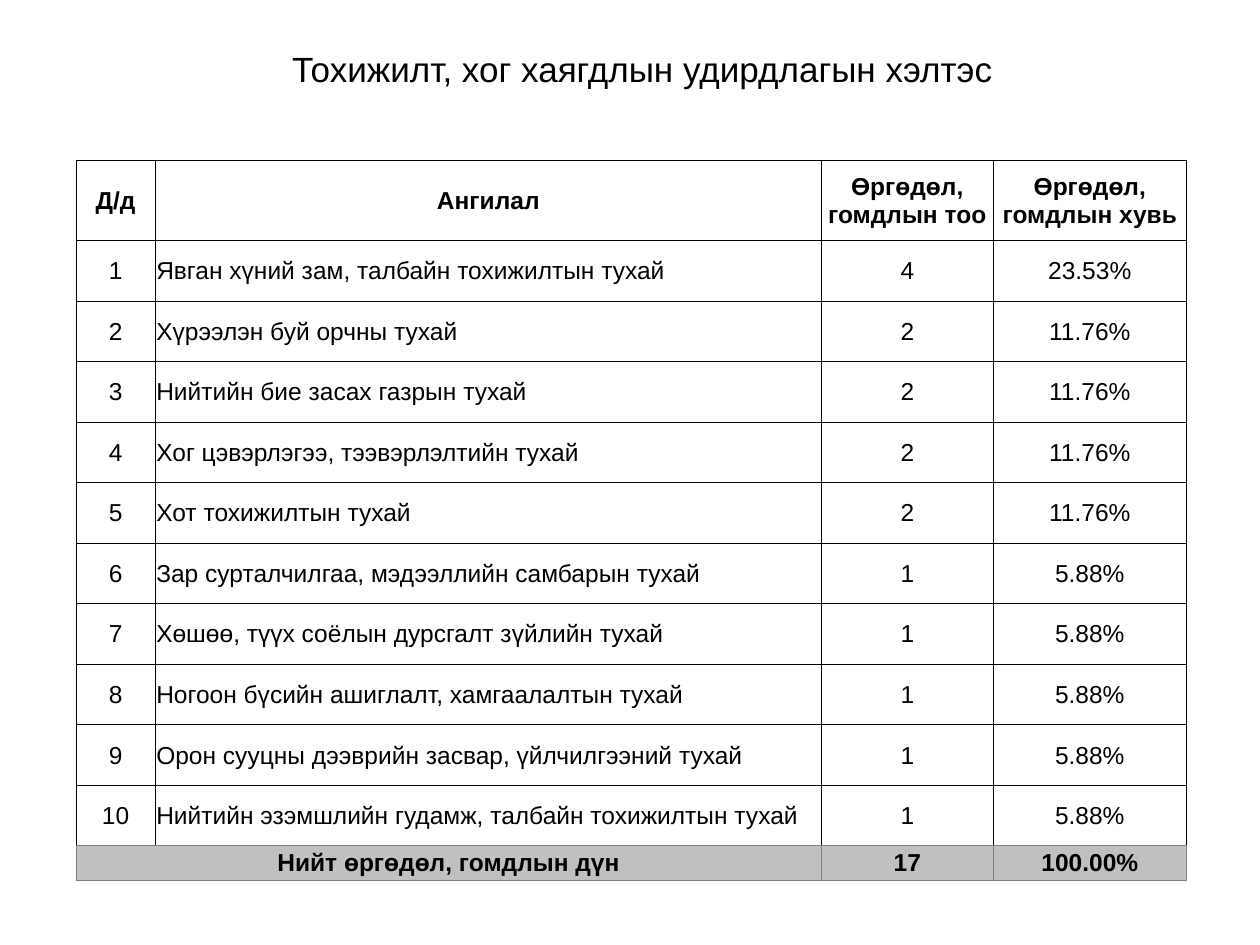
from lxml.etree import SubElement
from pptx import Presentation
from pptx.dml.color import RGBColor
from pptx.enum.text import MSO_ANCHOR, PP_ALIGN
from pptx.oxml.ns import qn
from pptx.util import Cm, Pt

TITLE = "Тохижилт, хог хаягдлын удирдлагын хэлтэс"
HEADS = ["Д/д", "Ангилал", "Өргөдөл, гомдлын тоо", "Өргөдөл, гомдлын хувь"]
TOPICS = [
    ("Явган хүний зам, талбайн тохижилтын тухай", 4),
    ("Хүрээлэн буй орчны тухай", 2),
    ("Нийтийн бие засах газрын тухай", 2),
    ("Хог цэвэрлэгээ, тээвэрлэлтийн тухай", 2),
    ("Хот тохижилтын тухай", 2),
    ("Зар сурталчилгаа, мэдээллийн самбарын тухай", 1),
    ("Хөшөө, түүх соёлын дурсгалт зүйлийн тухай", 1),
    ("Ногоон бүсийн ашиглалт, хамгаалалтын тухай", 1),
    ("Орон сууцны дээврийн засвар, үйлчилгээний тухай", 1),
    ("Нийтийн эзэмшлийн гудамж, талбайн тохижилтын тухай", 1),
]
WIDTHS = [1.6, 13.43, 3.46, 3.9]
HEIGHTS = [1.62] + [1.22] * len(TOPICS) + [0.69]


def paint(hue):
    """Turn a hex string into a colour."""
    return RGBColor.from_string(hue)


def style(frame, size, bold=False, align=PP_ALIGN.CENTER):
    """Format all the text of a frame."""
    for para in frame.paragraphs:
        para.alignment = align
        for run in para.runs:
            run.font.name = "Arial"
            run.font.size = Pt(size)
            run.font.bold = bold
            run.font.color.rgb = paint("000000")


def border(cell, hues):
    """Draw the left, right, top and bottom lines of a cell."""
    props = cell._tc.get_or_add_tcPr()
    for side, hue in zip("LRTB", hues):
        line = SubElement(props, qn(f"a:ln{side}"), w=str(Pt(0.5)))
        fill = SubElement(line, qn("a:solidFill"))
        SubElement(fill, qn("a:srgbClr"), val=hue)


def fill_cell(cell, text, hue, hues, bold, align):
    """Write one cell with its fill, lines and margins."""
    cell.text_frame.text = text
    style(cell.text_frame, 14, bold, align)
    cell.vertical_anchor = MSO_ANCHOR.MIDDLE
    cell.margin_left = cell.margin_right = cell.margin_top = Cm(0.02)
    cell.margin_bottom = Cm(0)
    border(cell, hues)
    cell.fill.solid()
    cell.fill.fore_color.rgb = paint(hue)


def add_title(slide):
    """Place the heading above the table."""
    box = slide.shapes.add_textbox(Cm(2), Cm(0.92), Cm(21.9), Cm(1.8))
    frame = box.text_frame
    frame.word_wrap = True
    frame.text = TITLE
    frame.paragraphs[0].line_spacing = 0.9
    style(frame, 20)


def list_rows():
    """Return the table's texts with shares worked out from the counts."""
    total = sum(count for _, count in TOPICS)
    body = [[str(i), topic, str(count), f"{count / total:.2%}"]
            for i, (topic, count) in enumerate(TOPICS, 1)]
    last = ["Нийт өргөдөл, гомдлын дүн", "", str(total), f"{1:.2%}"]
    return [HEADS, *body, last]


def add_grid(slide):
    """Build the table of requests by topic."""
    rows = list_rows()
    end = len(rows) - 1
    grid = slide.shapes.add_table(
        len(rows), len(WIDTHS), Cm(1.53), Cm(3.23),
        Cm(sum(WIDTHS)), Cm(sum(HEIGHTS))).table
    for col, width in zip(grid.columns, WIDTHS):
        col.width = Cm(width)
    for row, height in zip(grid.rows, HEIGHTS):
        row.height = Cm(height)
    for r, texts in enumerate(rows):
        hue = "C0C0C0" if r == end else "FFFFFF"
        hues = ["808080"] * 4 if r == end else ["000000"] * 4
        if r == end - 1:
            hues[3] = "808080"
        for c, text in enumerate(texts):
            left = c == 1 and 0 < r < end
            align = PP_ALIGN.LEFT if left else PP_ALIGN.CENTER
            fill_cell(grid.cell(r, c), text, hue, hues, r in (0, end), align)
    grid.cell(end, 0).merge(grid.cell(end, 1))


def main():
    """Build and save the slide."""
    deck = Presentation()
    deck.slide_width, deck.slide_height = Cm(25.4), Cm(19.05)
    slide = deck.slides.add_slide(deck.slide_layouts[6])
    add_title(slide)
    add_grid(slide)
    deck.save("out.pptx")


if __name__ == "__main__":
    main()
